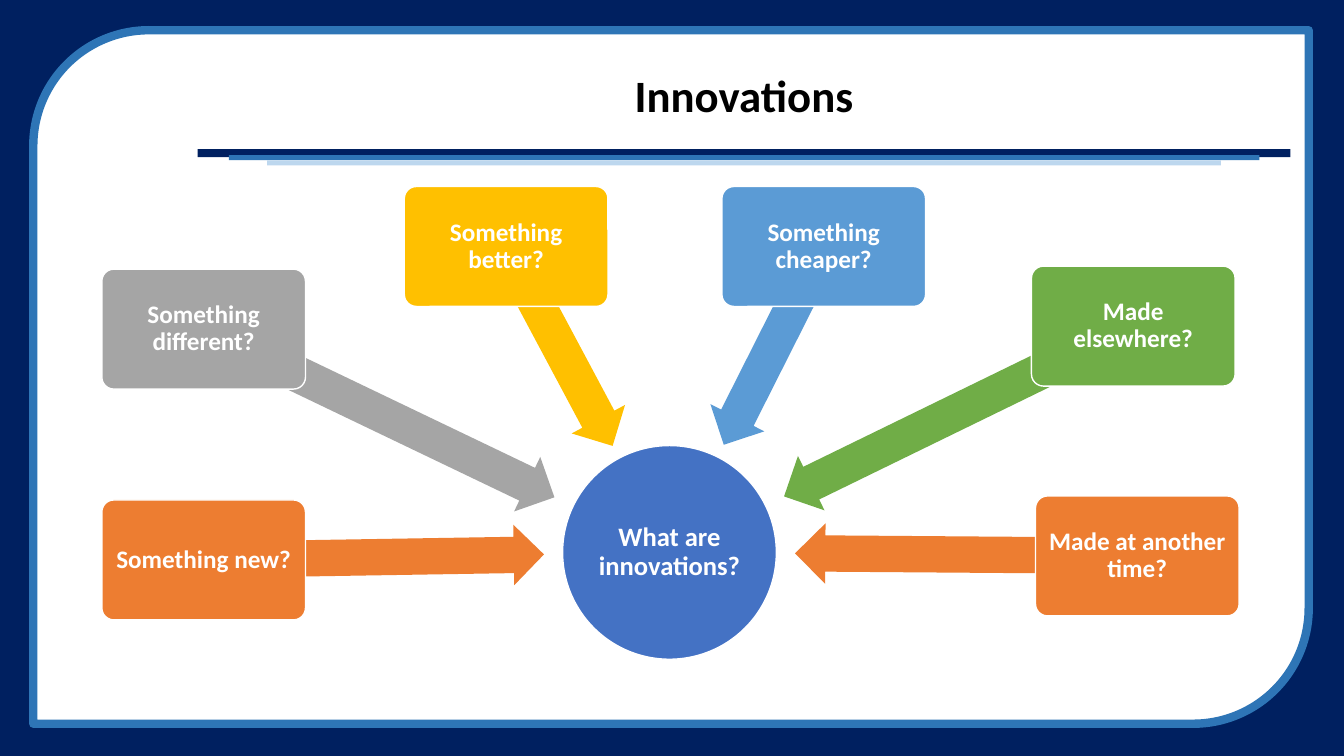
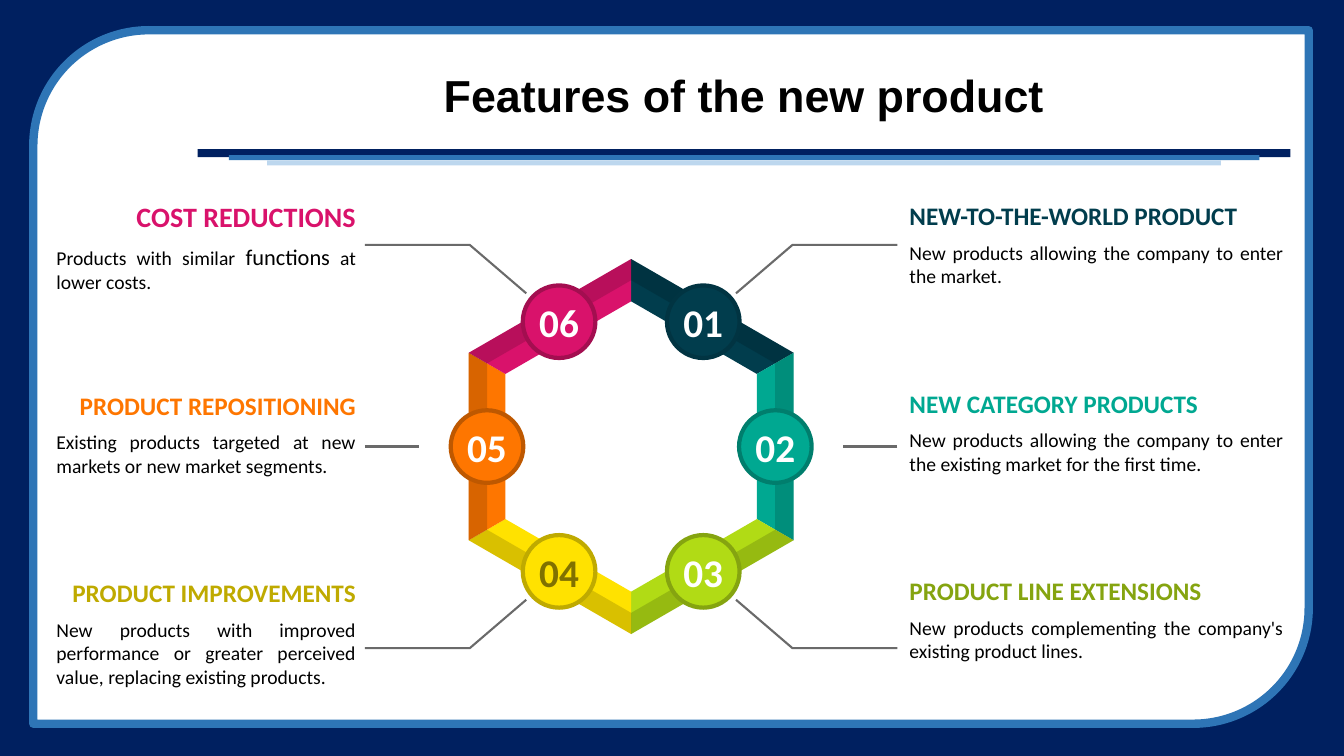
from math import atan2, cos, degrees, hypot, radians, sin

from lxml.etree import SubElement
from pptx import Presentation
from pptx.dml.color import RGBColor
from pptx.enum.shapes import MSO_CONNECTOR, MSO_SHAPE
from pptx.enum.text import MSO_ANCHOR, PP_ALIGN
from pptx.oxml.ns import qn
from pptx.util import Inches, Pt

COLORS = {
    "navy": "002060", "blue": "2E75B6", "pale": "BDD7EE",
    "white": "FFFFFF", "black": "000000", "leader": "6A6A6A",
    "hub": "4472C4", "orange": "ED7D31", "gray": "A5A5A5",
    "gold": "FFC000", "sky": "5B9BD5", "green": "70AD47",
    "petrol": "013D4D", "petrol_dark": "013442",
    "teal": "00A891", "teal_dark": "007E6D",
    "lime": "B1DB15", "lime_dark": "85A410",
    "yellow": "FFE200", "yellow_dark": "BFAA00", "olive": "807100",
    "amber": "FE7600", "amber_dark": "BE5800",
    "pink": "D9126B", "pink_dark": "A30E50",
}
SLIDE_WIDTH, SLIDE_HEIGHT = 13.33, 7.5
TITLE_BOX = (1.96, 0.49, 10.84, 0.97)
BODY_BOX = (0.56, 1.8, 12.17, 5.1)

IDEAS = [
    ("Something new?", "orange", 0.45, 3.16),
    ("Something different?", "gray", 0.45, 0.87),
    ("Something better?", "gold", 3.45, 0.05),
    ("Something cheaper?", "sky", 6.6, 0.05),
    ("Made elsewhere?", "green", 9.67, 0.84),
    ("Made at another time?", "orange", 9.71, 3.12),
]

FEATURES = [
    ("NEW-TO-THE-WORLD PRODUCT", "petrol", "petrol_dark", "petrol", "white", 18,
     [("New products allowing the company to enter the market.", 14)]),
    ("NEW CATEGORY PRODUCTS", "teal", "teal_dark", "teal", "white", 18,
     [("New products allowing the company to enter the existing market "
       "for the first time.", 14)]),
    ("PRODUCT LINE EXTENSIONS", "lime", "lime_dark", "lime_dark", "white", 18,
     [("New products complementing the company's existing product lines.", 14)]),
    ("PRODUCT IMPROVEMENTS", "yellow", "yellow_dark", "yellow_dark", "olive", 18,
     [("New products with improved performance or greater perceived value, "
       "replacing existing products.", 14)]),
    ("PRODUCT REPOSITIONING", "amber", "amber_dark", "amber", "white", 18,
     [("Existing products targeted at new markets or new market segments.", 14)]),
    ("COST REDUCTIONS", "pink", "pink_dark", "pink", "white", 20,
     [("Products with similar ", 14), ("functions", 16), (" at lower costs.", 14)]),
]


def rgb(name):
    return RGBColor.from_string(COLORS[name])


def paint(shape, fill=None, line=None, line_width=1):
    shape.shadow.inherit = False
    if fill:
        shape.fill.solid()
        shape.fill.fore_color.rgb = rgb(fill)
    else:
        shape.fill.background()
    if line:
        shape.line.color.rgb = rgb(line)
        shape.line.width = Pt(line_width)
    else:
        shape.line.fill.background()


def add_block(page, kind, box, fill, line=None, line_width=1):
    shape = page.shapes.add_shape(kind, *map(Inches, box))
    paint(shape, fill, line, line_width)
    return shape


def add_outline(page, points, fill=None, line=None, line_width=1, close=True):
    corners = [(Inches(x), Inches(y)) for x, y in points]
    builder = page.shapes.build_freeform(*corners[0])
    builder.add_line_segments(corners[1:], close=close)
    shape = builder.convert_to_shape()
    paint(shape, fill, line, line_width)
    return shape


def write(shape, spans, color, bold=False, font="Calibri", align=PP_ALIGN.CENTER,
          anchor=MSO_ANCHOR.MIDDLE, margins=(0.1, 0.05), spacing=None):
    frame = shape.text_frame
    frame.word_wrap = True
    frame.vertical_anchor = anchor
    frame.margin_left = frame.margin_right = Inches(margins[0])
    frame.margin_top = frame.margin_bottom = Inches(margins[1])
    para = frame.paragraphs[0]
    para.alignment = align
    para.line_spacing = spacing
    para.font.name = font
    para.font.bold = bold
    para.font.color.rgb = rgb(color)
    para.font.size = Pt(spans[0][1])
    for text, size in spans:
        span = para.add_run()
        span.text = text
        if size != spans[0][1]:
            span.font.size = Pt(size)


def add_text(page, box, spans, color, **style):
    write(page.shapes.add_textbox(*map(Inches, box)), spans, color, **style)


def add_page(deck, title, font):
    page = deck.slides.add_slide(deck.slide_layouts[6])
    add_block(page, MSO_SHAPE.RECTANGLE, (0, 0, SLIDE_WIDTH, SLIDE_HEIGHT), "navy")
    add_block(page, MSO_SHAPE.ROUND_2_DIAG_RECTANGLE, (0.33, 0.3, 12.65, 6.88),
              "white", "blue", 6)
    left, top, width, height = TITLE_BOX
    for inset, drop, thickness, color in [
            (0, 0.99, 0.08, "navy"), (0.31, 1.05, 0.05, "blue"),
            (0.69, 1.1, 0.05, "pale")]:
        add_block(page, MSO_SHAPE.RECTANGLE,
                  (left + inset, top + drop, width - 2 * inset, thickness), color)
    add_text(page, TITLE_BOX, [(title, 32)], "black", bold=True, font=font, spacing=0.9)
    return page


def add_idea_map(page, box):
    left, top = box[:2]
    hub_radius = 1.06
    hub_x, hub_y = left + 6.08, top + 3.68
    hub = add_block(page, MSO_SHAPE.OVAL,
                    (hub_x - hub_radius, hub_y - hub_radius, 2 * hub_radius, 2 * hub_radius),
                    "hub", "white")
    write(hub, [("What are innovations?", 19)], "white", bold=True,
          margins=(0.01, 0.01), spacing=0.9)
    card_width, card_height, arrow_height = 2.02, 1.19, 0.6
    for text, color, x, y in IDEAS:
        card_x, card_y = left + x + card_width / 2, top + y + card_height / 2
        run, rise = hub_x - card_x, hub_y - card_y
        distance = hypot(run, rise)
        length = 0.96 * distance - hub_radius
        middle_x = card_x + run / distance * length / 2
        middle_y = card_y + rise / distance * length / 2
        arrow = add_block(page, MSO_SHAPE.LEFT_ARROW,
                          (middle_x - length / 2, middle_y - arrow_height / 2,
                           length, arrow_height), color)
        arrow.adjustments[0], arrow.adjustments[1] = 0.6, 0.5
        arrow.rotation = (degrees(atan2(rise, run)) + 180) % 360
        card = add_block(page, MSO_SHAPE.ROUNDED_RECTANGLE,
                         (left + x, top + y, card_width, card_height), color, "white")
        card.adjustments[0] = 0.1
        write(card, [(text, 18)], "white", bold=True, margins=(0.08, 0.08), spacing=0.9)


def polar(center, radius, angle):
    turn = radians(angle)
    return center[0] + radius * sin(turn), center[1] - radius * cos(turn)


def hexagon_side(center, outer, inner, index):
    start, end = 60 * index, 60 * index + 60
    return [polar(center, outer, start), polar(center, outer, end),
            polar(center, inner, end), polar(center, inner, start)]


def add_ring(page, center):
    for index, feature in enumerate(FEATURES):
        add_outline(page, hexagon_side(center, 1.86, 1.44, index), feature[1])
    for index in range(len(FEATURES)):
        shade = add_outline(page, hexagon_side(center, 1.86, 1.65, index), "black")
        color = next(shade.element.spPr.iter(qn("a:srgbClr")))
        SubElement(color, qn("a:alpha"), val="15000")
    size = 0.72
    for index, (_, fill, edge, _, ink, _, _) in enumerate(FEATURES):
        x, y = polar(center, 1.43, 60 * index + 30)
        badge = add_block(page, MSO_SHAPE.OVAL,
                          (x - size / 2, y - size / 2, size, size), fill, edge, 3)
        write(badge, [(f"{index + 1:02}", 28)], ink, bold=True, margins=(0.04, 0.04))


def add_leaders(page, center):
    x, y = center
    for side in (-1, 1):
        for level in (-1, 1):
            add_outline(page, [(x + side * 2.64, y + level * 2),
                               (x + side * 1.6, y + level * 2),
                               (x + side * 1.04, y + level * 1.52)],
                        line="leader", line_width=1.5, close=False)
        ends = (x + side * 2.64, y, x + side * 2.1, y)
        leader = page.shapes.add_connector(MSO_CONNECTOR.STRAIGHT, *map(Inches, ends))
        leader.line.color.rgb = rgb("leader")
        leader.line.width = Pt(1.5)
        SubElement(leader.element.spPr, qn("a:effectLst"))


def add_caption(page, box, feature, align):
    left, top, width, height = box
    title, _, _, color, _, size, body = feature
    heading_height = 0.44
    add_text(page, (left, top, width, heading_height), [(title, size)], color, bold=True,
             align=align, anchor=MSO_ANCHOR.BOTTOM, margins=(0, 0.05))
    add_text(page, (left, top + heading_height, width, height - heading_height), body,
             "black", align=PP_ALIGN.JUSTIFY, anchor=MSO_ANCHOR.TOP, margins=(0, 0.05))


def add_feature_wheel(page, box):
    left, top, width = box[:3]
    center = (left + 5.7, top + 2.63)
    add_ring(page, center)
    add_leaders(page, center)
    for index, feature in enumerate(FEATURES):
        on_right = index < 3
        row = index if on_right else 5 - index
        column_width = 3.71 if on_right else 2.97
        x = left + width - column_width if on_right else left
        y = top + (0.1 if on_right else 0.12) + 1.86 * row
        add_caption(page, (x, y, column_width, 1.25), feature,
                    PP_ALIGN.LEFT if on_right else PP_ALIGN.RIGHT)


def main():
    deck = Presentation()
    deck.slide_width, deck.slide_height = Inches(SLIDE_WIDTH), Inches(SLIDE_HEIGHT)
    add_idea_map(add_page(deck, "Innovations", "Calibri"), BODY_BOX)
    add_feature_wheel(add_page(deck, "Features of the new product", "Arial"), BODY_BOX)
    deck.save("out.pptx")


if __name__ == "__main__":
    main()
